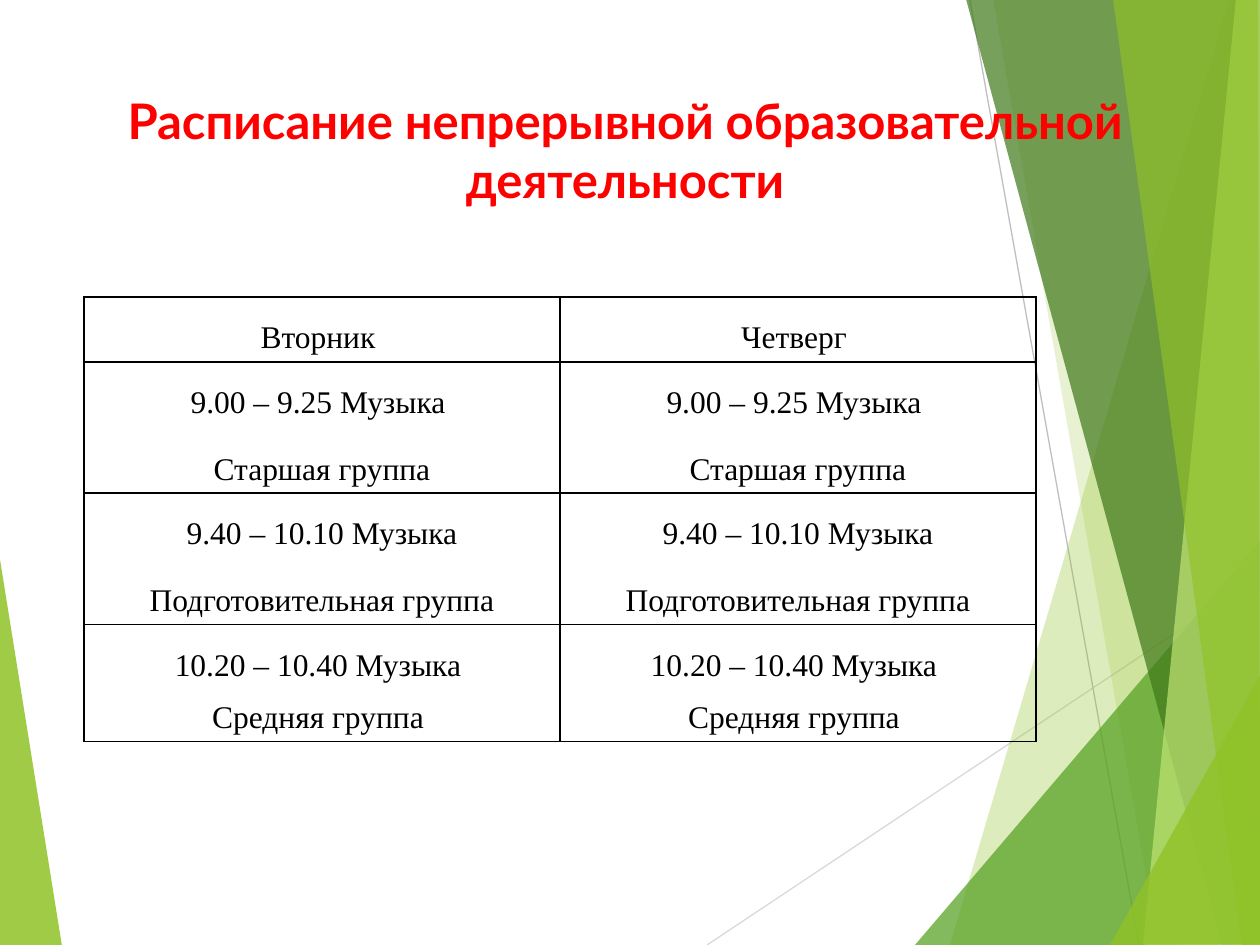
from dataclasses import dataclass

from lxml.etree import SubElement
from pptx import Presentation
from pptx.dml.color import RGBColor
from pptx.enum.shapes import MSO_CONNECTOR
from pptx.enum.text import MSO_ANCHOR, PP_ALIGN
from pptx.oxml.ns import qn
from pptx.util import Emu, Pt

EMU_PER_PX = 914400 / 126


@dataclass(frozen=True)
class Theme:
    title_font: str = "Lato"
    body_font: str = "Times New Roman"
    title_size: int = 28
    body_size: int = 18
    title: str = "FF0000"
    ink: str = "000000"
    lime: str = "90C226"
    pale_lime: str = "C0E474"
    green: str = "54A021"
    dark_green: str = "3F7819"
    light_gray: str = "D9D9D9"
    gray: str = "BFBFBF"


THEME = Theme()

LEFT_WEDGE = (THEME.lime, 85, [(-1, 553), (62, 946), (-1, 945)])
RAYS = [
    (THEME.light_gray, (707, 945), (1261, 576)),
    (THEME.gray, (970, 0), (1139, 945)),
]
RIGHT_FACETS = [
    (THEME.lime, 30, [(1229, 0), (950, 945), (1262, 946), (1261, 1)]),
    (THEME.lime, 20, [(993, -1), (1158, 945), (1261, 945), (1261, -1)]),
    (THEME.green, 72, [(915, 945), (1260, 541), (1261, 945)]),
    (THEME.dark_green, 70, [(966, -1), (1222, 945), (1261, 944), (1261, -1)]),
    (THEME.pale_lime, 70, [(1236, -1), (1143, 945), (1261, 945), (1260, -1)]),
    (THEME.lime, 65, [(1113, -1), (1242, 945), (1260, 945), (1258, -1)]),
    (THEME.lime, 80, [(1110, 945), (1261, 674), (1261, 944)]),
]

DAYS = ["Вторник ", "Четверг "]
LESSONS = [
    (["9.00 – 9.25 Музыка ", "Старшая группа"], 8),
    (["9.40 – 10.10 Музыка", "Подготовительная группа"], 8),
    (["10.20 – 10.40 Музыка ", "Средняя группа "], 0),
]


def px(length):
    return Emu(round(length * EMU_PER_PX))


def color(value):
    return RGBColor.from_string(value)


def write_text(frame, lines, *, font, size, ink, bold=False, spacing=None, after=None):
    for index, line in enumerate(lines):
        para = frame.paragraphs[0] if index == 0 else frame.add_paragraph()
        para.alignment = PP_ALIGN.CENTER
        para.line_spacing = spacing
        para.space_after = None if after is None else Pt(after)
        span = para.add_run()
        span.text = line
        span.font.name = font
        span.font.size = Pt(size)
        span.font.bold = bold
        span.font.color.rgb = color(ink)


def add_facet(page, fill, opacity, points):
    builder = page.shapes.build_freeform(*points[0], scale=EMU_PER_PX)
    builder.add_line_segments(points[1:], close=True)
    facet = builder.convert_to_shape()
    facet.shadow.inherit = False
    facet.line.fill.background()
    facet.fill.solid()
    facet.fill.fore_color.rgb = color(fill)
    tint = facet._element.spPr.find(f"{qn('a:solidFill')}/{qn('a:srgbClr')}")
    SubElement(tint, qn("a:alpha"), val=str(opacity * 1000))


def add_ray(page, ink, start, end):
    ray = page.shapes.add_connector(
        MSO_CONNECTOR.STRAIGHT, *map(px, start), *map(px, end)
    )
    ray.line.color.rgb = color(ink)
    ray.line.width = Pt(0.75)
    SubElement(ray._element.spPr, qn("a:effectLst"))


def place_title(page, text):
    title = page.shapes.title
    page.shapes._spTree.append(title._element)
    title.left, title.top, title.width, title.height = map(px, (84, 84, 1082, 181))
    frame = title.text_frame
    frame.word_wrap = True
    frame.vertical_anchor = MSO_ANCHOR.TOP
    write_text(frame, [text], font=THEME.title_font, size=THEME.title_size,
               ink=THEME.title, bold=True)


def add_borders(cell):
    properties = cell._tc.get_or_add_tcPr()
    for position, side in enumerate(("a:lnL", "a:lnR", "a:lnT", "a:lnB")):
        border = properties.makeelement(qn(side), {"w": str(Pt(1))})
        fill = SubElement(border, qn("a:solidFill"))
        SubElement(fill, qn("a:srgbClr"), val=THEME.ink)
        properties.insert(position, border)


def fill_cell(cell, lines, after):
    cell.fill.background()
    add_borders(cell)
    write_text(cell.text_frame, lines, font=THEME.body_font, size=THEME.body_size,
               ink=THEME.ink, spacing=1.5, after=after)


def add_schedule(page):
    rows = [[([day], 0) for day in DAYS]]
    rows += [[lesson] * len(DAYS) for lesson in LESSONS]
    box = page.shapes.add_table(
        len(rows), len(DAYS), px(84), px(297), px(952), px(52 * len(rows))
    )
    table = box.table
    table.first_row = False
    table.horz_banding = False
    for row_index, row in enumerate(rows):
        for column_index, (lines, after) in enumerate(row):
            fill_cell(table.cell(row_index, column_index), lines, after)


def main():
    deck = Presentation()
    deck.slide_width, deck.slide_height = px(1260), px(945)
    page = deck.slides.add_slide(deck.slide_layouts[5])
    add_facet(page, *LEFT_WEDGE)
    for ray in RAYS:
        add_ray(page, *ray)
    for facet in RIGHT_FACETS:
        add_facet(page, *facet)
    place_title(page, "Расписание непрерывной образовательной деятельности")
    add_schedule(page)
    deck.save("out.pptx")


if __name__ == "__main__":
    main()
